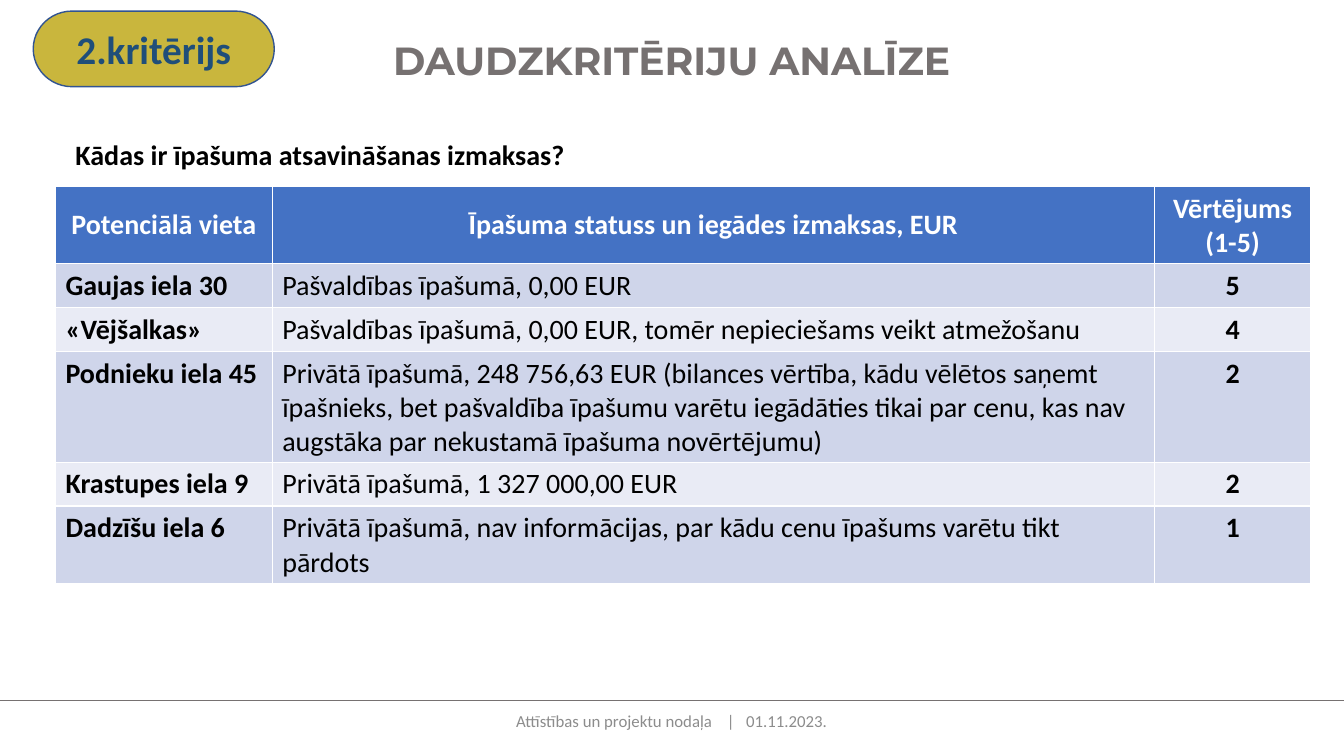
from lxml import etree
from pptx import Presentation
from pptx.dml.color import RGBColor
from pptx.enum import shapes, text
from pptx.oxml import ns
from pptx.util import Inches, Pt

TITLE = "DAUDZKRITĒRIJU ANALĪZE"
CRITERION = "2.kritērijs"
QUESTION = "Kādas ir īpašuma atsavināšanas izmaksas?"
FOOTER = "Attīstības un projektu nodaļa\t|\t01.11.2023."
FOOTER_TABS = (2.09, 2.28)
HEADER = ("Potenciālā vieta", "Īpašuma statuss un iegādes izmaksas, EUR", "Vērtējums (1-5)")
SITES = [
    ("Gaujas iela 30", "Pašvaldības īpašumā, 0,00 EUR", "5"),
    ("«Vējšalkas»", "Pašvaldības īpašumā, 0,00 EUR, tomēr nepieciešams veikt atmežošanu", "4"),
    ("Podnieku iela 45", "Privātā īpašumā, 248 756,63 EUR (bilances vērtība, kādu vēlētos saņemt "
     "īpašnieks, bet pašvaldība īpašumu varētu iegādāties tikai par cenu, kas nav augstāka par "
     "nekustamā īpašuma novērtējumu)", "2"),
    ("Krastupes iela 9", "Privātā īpašumā, 1 327 000,00 EUR", "2"),
    ("Dadzīšu iela 6", "Privātā īpašumā, nav informācijas, par kādu cenu īpašums varētu tikt pārdots", "1"),
]
COLUMN_WIDTHS = (2.15, 8.75, 1.55)
ROW_HEIGHTS = (0.76, 0.43, 0.43, 1.1, 0.43, 0.76)

WHITE = RGBColor(0xFF, 0xFF, 0xFF)
BLACK = RGBColor(0x00, 0x00, 0x00)
GRAY = RGBColor(0x76, 0x71, 0x71)
FOOTER_GRAY = RGBColor(0x8C, 0x8C, 0x8C)
HEADER_BLUE = RGBColor(0x44, 0x72, 0xC4)
BANDS = (RGBColor(0xCF, 0xD5, 0xEA), RGBColor(0xE9, 0xEB, 0xF5))
GOLD = RGBColor(0xC9, 0xB6, 0x3D)
OUTLINE_BLUE = RGBColor(0x32, 0x54, 0x91)
DARK_BLUE = RGBColor(0x1F, 0x4E, 0x79)

LEFT, CENTER = text.PP_ALIGN.LEFT, text.PP_ALIGN.CENTER
TOP, MIDDLE = text.MSO_ANCHOR.TOP, text.MSO_ANCHOR.MIDDLE


def inches(*lengths):
    return [Inches(length) for length in lengths]


def write(frame, wording, size, color, bold=False, align=LEFT, font="Calibri"):
    paragraph = frame.paragraphs[0]
    paragraph.alignment = align
    run = paragraph.add_run()
    run.text = wording
    run.font.name = font
    run.font.size = Pt(size)
    run.font.bold = bold
    run.font.color.rgb = color
    return paragraph


def add_text_frame(slide, *box):
    frame = slide.shapes.add_textbox(*inches(*box)).text_frame
    frame.word_wrap = True
    return frame


def add_title(slide):
    title = slide.shapes.title
    title.left, title.top, title.width, title.height = inches(0.44, 0.31, 12.44, 0.57)
    frame = title.text_frame
    frame.auto_size = text.MSO_AUTO_SIZE.NONE
    frame.vertical_anchor = TOP
    write(frame, TITLE, 28, GRAY, True, CENTER, "Montserrat")


def add_footer(slide):
    rule = slide.shapes.add_connector(shapes.MSO_CONNECTOR.STRAIGHT, *inches(0, 6.95, 13.33, 6.95))
    rule.line.color.rgb = GRAY
    rule.line.width = Pt(0.5)
    etree.SubElement(rule._element.spPr, ns.qn("a:effectLst"))

    frame = add_text_frame(slide, 4.42, 6.95, 4.5, 0.4)
    frame.vertical_anchor = MIDDLE
    frame.margin_left = Inches(0.7)
    paragraph = write(frame, FOOTER, 12, FOOTER_GRAY)
    tab_list = etree.SubElement(paragraph._p.get_or_add_pPr(), ns.qn("a:tabLst"))
    for position in FOOTER_TABS:
        etree.SubElement(tab_list, ns.qn("a:tab"), pos=str(Inches(position)), algn="l")


def add_question(slide):
    question = write(add_text_frame(slide, 0.65, 1.35, 12.24, 0.45), QUESTION, 20, BLACK, True)
    question.line_spacing = 0.9
    question.space_before = Pt(10)


def add_sites_table(slide):
    rows = [HEADER] + SITES
    box = inches(0.55, 1.85, sum(COLUMN_WIDTHS), sum(ROW_HEIGHTS))
    table = slide.shapes.add_table(len(rows), len(HEADER), *box).table
    for column, width in zip(table.columns, COLUMN_WIDTHS):
        column.width = Inches(width)
    for r, (row, height) in enumerate(zip(rows, ROW_HEIGHTS)):
        table.rows[r].height = Inches(height)
        is_header = r == 0
        for c, wording in enumerate(row):
            cell = table.cell(r, c)
            cell.fill.solid()
            cell.fill.fore_color.rgb = HEADER_BLUE if is_header else BANDS[(r - 1) % 2]
            cell.vertical_anchor = MIDDLE if is_header else TOP
            write(cell.text_frame, wording, 20, WHITE if is_header else BLACK,
                  is_header or c != 1, CENTER if is_header or c == 2 else LEFT)


def add_criterion(slide):
    badge = slide.shapes.add_shape(shapes.MSO_SHAPE.FLOWCHART_TERMINATOR, *inches(0.33, 0.11, 2.39, 0.75))
    badge.shadow.inherit = False
    badge.fill.solid()
    badge.fill.fore_color.rgb = GOLD
    badge.line.color.rgb = OUTLINE_BLUE
    badge.line.width = Pt(1)
    badge.text_frame.vertical_anchor = MIDDLE
    write(badge.text_frame, CRITERION, 28, DARK_BLUE, True, CENTER)


def main():
    deck = Presentation()
    deck.slide_width, deck.slide_height = inches(13.33, 7.5)
    slide = deck.slides.add_slide(deck.slide_layouts[5])
    add_footer(slide)
    add_title(slide)
    add_question(slide)
    add_sites_table(slide)
    add_criterion(slide)
    deck.save("out.pptx")


if __name__ == "__main__":
    main()
